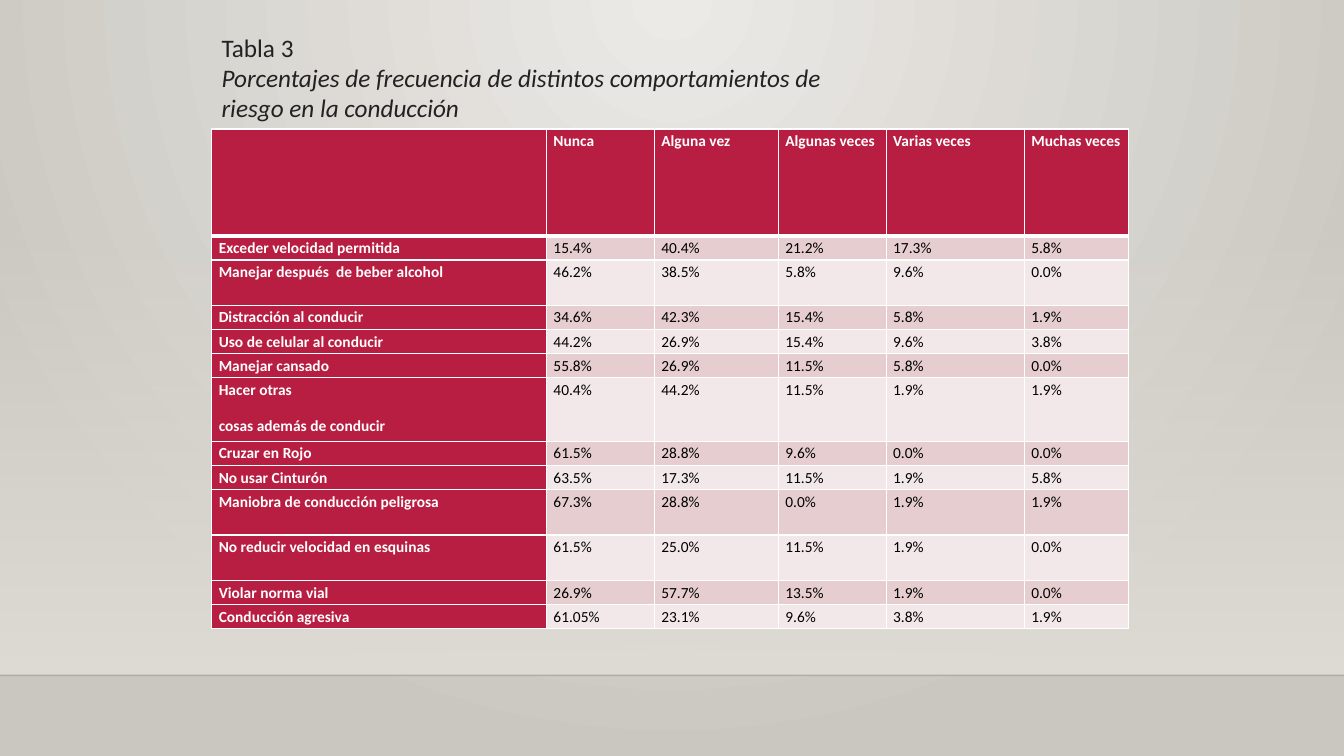
from lxml import etree
from pptx import Presentation
from pptx.dml.color import RGBColor
from pptx.enum.shapes import MSO_CONNECTOR, MSO_SHAPE
from pptx.enum.text import MSO_AUTO_SIZE, PP_ALIGN
from pptx.oxml.ns import qn
from pptx.util import Inches, Pt

RECTANGLE = MSO_SHAPE.RECTANGLE
STRAIGHT = MSO_CONNECTOR.STRAIGHT
GROW = MSO_AUTO_SIZE.SHAPE_TO_FIT_TEXT
LEFT, JUSTIFY = PP_ALIGN.LEFT, PP_ALIGN.JUSTIFY

FONT = "Calibri"
COLORS = {
    "glow": "ECEAE7",
    "edge": "CAC7C1",
    "wall": "DFDBD5",
    "floor_line": "000001",
    "title": "222222",
    "crimson": "B71E42",
    "odd_row": "E6CDCF",
    "even_row": "F3E8E9",
    "white": "FFFFFF",
    "black": "000000",
}
SLIDE_WIDTH, SLIDE_HEIGHT = 13.33, 7.5
COLUMN_WIDTHS = [3.32, 1.07, 1.23, 1.07, 1.37, 1.03]
HEADER_HEIGHT, ROW_HEIGHT = 1.06, 0.24
HEADINGS = ["", "Nunca", "Alguna vez", "Algunas veces", "Varias veces", "Muchas veces"]
BEHAVIOURS = [
    (ROW_HEIGHT, "Exceder velocidad permitida", "15.4%", "40.4%", "21.2%", "17.3%", "5.8%"),
    (0.45, "Manejar después  de beber alcohol", "46.2%", "38.5%", "5.8%", "9.6%", "0.0%"),
    (ROW_HEIGHT, "Distracción al conducir", "34.6%", "42.3%", "15.4%", "5.8%", "1.9%"),
    (ROW_HEIGHT, "Uso de celular al conducir", "44.2%", "26.9%", "15.4%", "9.6%", "3.8%"),
    (ROW_HEIGHT, "Manejar cansado", "55.8%", "26.9%", "11.5%", "5.8%", "0.0%"),
    (0.63, "Hacer otras\ncosas además de conducir", "40.4%", "44.2%", "11.5%", "1.9%", "1.9%"),
    (ROW_HEIGHT, "Cruzar en Rojo", "61.5%", "28.8%", "9.6%", "0.0%", "0.0%"),
    (ROW_HEIGHT, "No usar Cinturón", "63.5%", "17.3%", "11.5%", "1.9%", "5.8%"),
    (0.45, "Maniobra de conducción peligrosa", "67.3%", "28.8%", "0.0%", "1.9%", "1.9%"),
    (0.45, "No reducir velocidad en esquinas", "61.5%", "25.0%", "11.5%", "1.9%", "0.0%"),
    (ROW_HEIGHT, "Violar norma vial", "26.9%", "57.7%", "13.5%", "1.9%", "0.0%"),
    (ROW_HEIGHT, "Conducción agresiva", "61.05%", "23.1%", "9.6%", "3.8%", "1.9%"),
]


def rgb(name):
    """Return the named colour."""
    return RGBColor.from_string(COLORS[name])


def set_opacity(element, percent):
    """Give the first colour inside an element an opacity."""
    color = next(element.iter(qn("a:srgbClr")))
    etree.SubElement(color, qn("a:alpha"), val=str(percent * 1000))


def set_gradient(fill, element, start, end):
    """Fill with two colours and return the gradient element."""
    fill.gradient()
    for stop, name in zip(fill.gradient_stops, (start, end)):
        stop.color.rgb = rgb(name)
    return next(element.iter(qn("a:gradFill")))


def write(frame, text, size=11, color="black", bold=False, italic=False,
          align=LEFT, spacing=None, after=0, new=False):
    """Write each line of text as a paragraph in one format."""
    for index, line in enumerate(text.split("\n")):
        para = frame.add_paragraph() if index or new else frame.paragraphs[0]
        para.alignment = align
        para.space_after = Pt(after)
        if spacing:
            para.line_spacing = spacing
        span = para.add_run()
        span.text = line
        span.font.name = FONT
        span.font.size = Pt(size)
        span.font.bold = bold
        span.font.italic = italic
        span.font.color.rgb = rgb(color)


def set_borders(cell, top, bottom):
    """Draw white borders around a cell, with top and bottom widths in points."""
    properties = cell._tc.get_or_add_tcPr()
    sides = (("a:lnL", 1), ("a:lnR", 1), ("a:lnT", top), ("a:lnB", bottom))
    for index, (tag, width) in enumerate(sides):
        line = etree.Element(qn(tag), w=str(Pt(width)))
        fill = etree.SubElement(line, qn("a:solidFill"))
        etree.SubElement(fill, qn("a:srgbClr"), val=COLORS["white"])
        properties.insert(index, line)


def add_backdrop(page, left, top, width, height):
    """Paint the round glow, the wall that fades in and the floor line."""
    glow = set_gradient(page.background.fill, page.element, "glow", "edge")
    glow.remove(glow.find(qn("a:lin")))
    circle = etree.SubElement(glow, qn("a:path"), path="circle")
    etree.SubElement(circle, qn("a:fillToRect"), l="43000", t="0", r="43000", b="100000")

    wall = page.shapes.add_shape(RECTANGLE, Inches(left), Inches(top),
                                 Inches(width), Inches(height))
    wall.shadow.inherit = False
    wall.line.fill.background()
    fade = set_gradient(wall.fill, wall.element, "wall", "wall")
    wall.fill.gradient_angle = 270
    set_opacity(fade, 0)

    floor = Inches(top + height)
    edge = page.shapes.add_connector(STRAIGHT, Inches(left), floor,
                                     Inches(left + width), floor)
    edge.line.width = Pt(1)
    edge.line.color.rgb = rgb("floor_line")
    set_opacity(edge.element, 20)
    etree.SubElement(edge.element.spPr, qn("a:effectLst"))


def add_frequency_table(page, left, top):
    """Build the table of behaviours by frequency."""
    rows = [(HEADER_HEIGHT, *HEADINGS), *BEHAVIOURS]
    table = page.shapes.add_table(
        len(rows), len(COLUMN_WIDTHS), Inches(left), Inches(top),
        Inches(sum(COLUMN_WIDTHS)), Inches(sum(row[0] for row in rows))).table
    for column, width in zip(table.columns, COLUMN_WIDTHS):
        column.width = Inches(width)
    for number, (height, *texts) in enumerate(rows):
        table.rows[number].height = Inches(height)
        band = "odd_row" if number % 2 else "even_row"
        for position, text in enumerate(texts):
            cell = table.cell(number, position)
            heading = number == 0 or position == 0
            cell.margin_left = cell.margin_right = Inches(0.07)
            cell.margin_top = cell.margin_bottom = 0
            cell.fill.solid()
            cell.fill.fore_color.rgb = rgb("crimson" if heading else band)
            set_borders(cell, 3 if number == 1 else 1, 3 if number == 0 else 1)
            if text:
                write(cell.text_frame, text, bold=heading, spacing=1.15,
                      color="white" if heading else "black",
                      align=LEFT if number else JUSTIFY, after=10 if number else 0)


def add_title(page, left, top, width, height):
    """Write the table number and its caption."""
    box = page.shapes.add_textbox(Inches(left), Inches(top), Inches(width), Inches(height))
    frame = box.text_frame
    frame.word_wrap = True
    frame.auto_size = GROW
    write(frame, "Tabla 3", size=18, color="title")
    write(frame, "Porcentajes de frecuencia de distintos comportamientos de riesgo en la conducción",
          size=18, color="title", italic=True, new=True)


def main():
    """Build the slide and save it."""
    deck = Presentation()
    deck.slide_width, deck.slide_height = Inches(SLIDE_WIDTH), Inches(SLIDE_HEIGHT)
    page = deck.slides.add_slide(deck.slide_layouts[6])
    add_backdrop(page, 0, 2.21, SLIDE_WIDTH, 4.49)
    add_frequency_table(page, 2.1, 1.28)
    add_title(page, 2.1, 0.27, 6.67, 1.01)
    deck.save("out.pptx")


if __name__ == "__main__":
    main()
